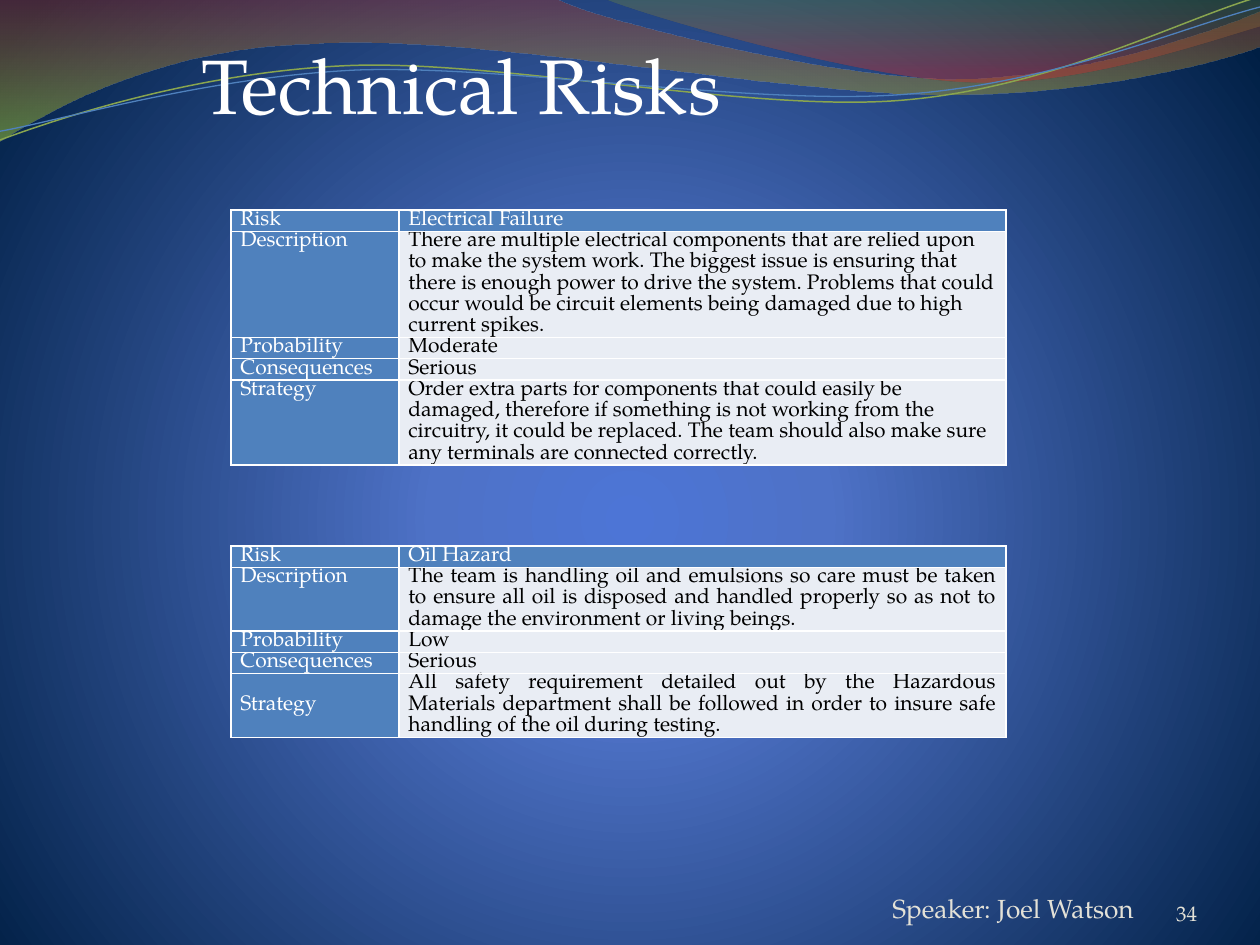
from math import cos, radians, sin

from lxml import etree
from pptx import Presentation
from pptx.dml.color import RGBColor
from pptx.enum.text import MSO_ANCHOR, PP_ALIGN
from pptx.oxml.ns import qn
from pptx.util import Pt

LEFT, RIGHT, JUSTIFY = PP_ALIGN.LEFT, PP_ALIGN.RIGHT, PP_ALIGN.JUSTIFY
TOP, MIDDLE, BOTTOM = MSO_ANCHOR.TOP, MSO_ANCHOR.MIDDLE, MSO_ANCHOR.BOTTOM

FONT = "TeX Gyre Pagella"
COLORS = {"white": "FFFFFF", "black": "000000", "blue": "4F81BD", "pale": "E9EDF4",
          "muted": "E3E1D7", "green": "89A54F"}

# Content: each row is label, text, number of text lines
ELECTRICAL = [
    ("Risk", "Electrical Failure", 1),
    ("Description", "There are multiple electrical components that are relied upon to make "
     "the system work. The biggest issue is ensuring that there is enough power to drive "
     "the system. Problems that could occur would be circuit elements being damaged due "
     "to high current spikes.", 5),
    ("Probability", "Moderate", 1),
    ("Consequences", "Serious", 1),
    ("Strategy", "Order extra parts for components that could easily be damaged, therefore "
     "if something is not working from the circuitry, it could be replaced. The team "
     "should also make sure any terminals are connected correctly.", 4),
]
OIL = [
    ("Risk", "Oil Hazard", 1),
    ("Description", "The team is handling oil and emulsions so care must be taken to ensure "
     "all oil is disposed and handled properly so as not to damage the environment or "
     "living beings.", 3),
    ("Probability", "Low", 1),
    ("Consequences", "Serious", 1),
    ("Strategy", "All safety requirement detailed out by the Hazardous Materials department "
     "shall be followed in order to insure safe handling of the oil during testing.", 3),
]
# Top, alignment, anchor of the last label, rows
TABLES = [(120, LEFT, TOP, ELECTRICAL), (312, JUSTIFY, MIDDLE, OIL)]
TABLE_LEFT, COLUMNS, LINE = 132, (96, 347), 12.14

# Text, box, size, colour
FOOTERS = [("Speaker: Joel Watson", (444, 504, 204, 24), 15, "muted"),
           ("34", (624, 500, 60, 29), 12, "muted")]

# Gradient stops: position %, colour, opacity %
BACKGROUND = [(0, "4D75D6", 100), (25, "4E72C7", 100), (100, "001F44", 100)]
# Waves in points: a pair is a line end, six numbers are a cubic curve
BANDS = [
    ([(0, 0), (317, -1), (343, 12, 478, 45, 546, 45), (614, 45, 690, 19, 720, 6.5),
      (721, 26), (708, 32, 626, 55, 537, 54), (448, 54, 275, 20, 185, 24.5),
      (93, 26, 33, 60, -1, 81), (0, 0)],
     [(0, "973330", 45), (100, "95C238", 55)]),
    ([(345, -1), (366, 8, 491, 45, 554, 47), (616, 50, 692, 23, 720, 15), (720, 0),
      (345, -1)],
     [(0, "769537", 30), (80, "BE3330", 45)]),
]
# Steps, centre, colour, line width
TILT = -2.7
STRANDS = [
    ([(0, 80), (35, 67, 114, 41, 199, 37.5), (284, 34, 427, 64, 513, 57.5),
      (600, 51, 675, 11, 718.5, -1.5)], (359.3, 41.4), "green", 0.85),
    ([(0, 75), (34, 69, 118, 44, 204, 40), (290, 37, 430, 60.5, 516, 54),
      (602, 48, 677, 15, 720, 4)], (359.6, 42.5), "blue", 0.75),
]


def color(name):
    return RGBColor.from_string(COLORS[name])


def set_gradient(owner, fill, stops, direction):
    """Fill with any number of stops; direction is the closing XML element."""
    fill.gradient()
    grad = owner.find(".//" + qn("a:gradFill"))
    for child in list(grad):
        grad.remove(child)
    gs_list = etree.SubElement(grad, qn("a:gsLst"))
    for pos, value, opacity in stops:
        gs = etree.SubElement(gs_list, qn("a:gs"), pos=str(pos * 1000))
        clr = etree.SubElement(gs, qn("a:srgbClr"), val=value)
        if opacity < 100:
            etree.SubElement(clr, qn("a:alpha"), val=str(opacity * 1000))
    grad.append(direction)


def turn(step, center, angle):
    """Rotate every point of a step about a centre."""
    c, d = cos(radians(angle)), sin(radians(angle))
    turned = []
    for x, y in zip(step[::2], step[1::2]):
        x, y = x - center[0], y - center[1]
        turned += [center[0] + x * c - y * d, center[1] + x * d + y * c]
    return tuple(turned)


def add_wave(s, steps, close):
    """Draw through all points, then join each three into a cubic curve."""
    points = [(Pt(x), Pt(y)) for step in steps for x, y in zip(step[::2], step[1::2])]
    builder = s.shapes.build_freeform(*points[0])
    builder.add_line_segments(points[1:], close=close)
    sp = builder.convert_to_shape()
    sp.shadow.inherit = False
    lines = iter(sp.element.findall(".//" + qn("a:lnTo")))
    for step in steps[1:]:
        line = next(lines)
        if len(step) == 6:
            curve = etree.Element(qn("a:cubicBezTo"))
            line.addprevious(curve)
            for part in (line, next(lines), next(lines)):
                curve.append(part[0])
                part.getparent().remove(part)
    return sp


def write(tf, text, size, name, align=LEFT):
    tf.text = text
    p = tf.paragraphs[0]
    p.alignment = align
    r = p.runs[0]
    r.font.name, r.font.size, r.font.bold = FONT, Pt(size), False
    r.font.color.rgb = color(name)
    return p


def set_borders(cell):
    tc_pr = cell._tc.get_or_add_tcPr()
    for i, side in enumerate(("a:lnL", "a:lnR", "a:lnT", "a:lnB")):
        ln = etree.Element(qn(side), w=str(Pt(1)))
        solid = etree.SubElement(ln, qn("a:solidFill"))
        etree.SubElement(solid, qn("a:srgbClr"), val=COLORS["white"])
        tc_pr.insert(i, ln)


def add_risk_table(s, top, align, last_anchor, rows):
    height = LINE * sum(row[2] for row in rows)
    table = s.shapes.add_table(len(rows), 2, Pt(TABLE_LEFT), Pt(top),
                               Pt(sum(COLUMNS)), Pt(height)).table
    for column, width in zip(table.columns, COLUMNS):
        column.width = Pt(width)
    for i, (label, text, lines) in enumerate(rows):
        table.rows[i].height = Pt(LINE * lines)
        for j, value in enumerate((label, text)):
            cell = table.cell(i, j)
            heading = i == 0 or j == 0
            p = write(cell.text_frame, value, 12, "white" if heading else "black", align)
            p.line_spacing = Pt(LINE)
            cell.margin_left, cell.margin_right = Pt(5.4), Pt(5.6)
            cell.margin_top = cell.margin_bottom = 0
            cell.fill.solid()
            cell.fill.fore_color.rgb = color("blue" if heading else "pale")
            set_borders(cell)
    table.cell(len(rows) - 1, 0).vertical_anchor = last_anchor


def main():
    prs = Presentation()
    prs.slide_width, prs.slide_height = Pt(720), Pt(540)
    s = prs.slides.add_slide(prs.slide_layouts[5])

    # Background glow
    glow = etree.Element(qn("a:path"), path="circle")
    etree.SubElement(glow, qn("a:fillToRect"), l="10000", t="110000", r="10000", b="100000")
    set_gradient(s.element, s.background.fill, BACKGROUND, glow)

    # Waves along the top
    for steps, stops in BANDS:
        sp = add_wave(s, steps, True)
        sp.line.fill.background()
        down = etree.Element(qn("a:lin"), ang="5400000", scaled="0")
        set_gradient(sp.element, sp.fill, stops, down)
    for steps, center, name, width in STRANDS:
        sp = add_wave(s, [turn(step, center, -TILT) for step in steps], False)
        sp.rotation = TILT
        sp.fill.background()
        sp.line.color.rgb = color(name)
        sp.line.width = Pt(width)

    # Risk tables
    for table in TABLES:
        add_risk_table(s, *table)

    # Title, in front of the waves
    title = s.shapes.title
    title.left, title.top, title.width, title.height = Pt(108), Pt(18), Pt(420), Pt(60.5)
    write(title.text_frame, "Technical Risks", 44, "white")
    title.text_frame.vertical_anchor = TOP
    s.shapes.element.append(title.element)

    # Speaker and slide number
    for text, box, size, name in FOOTERS:
        tf = s.shapes.add_textbox(*map(Pt, box)).text_frame
        tf.word_wrap = True
        tf.margin_left = tf.margin_right = tf.margin_top = tf.margin_bottom = 0
        tf.vertical_anchor = BOTTOM
        write(tf, text, size, name, RIGHT)

    prs.save("out.pptx")


if __name__ == "__main__":
    main()
